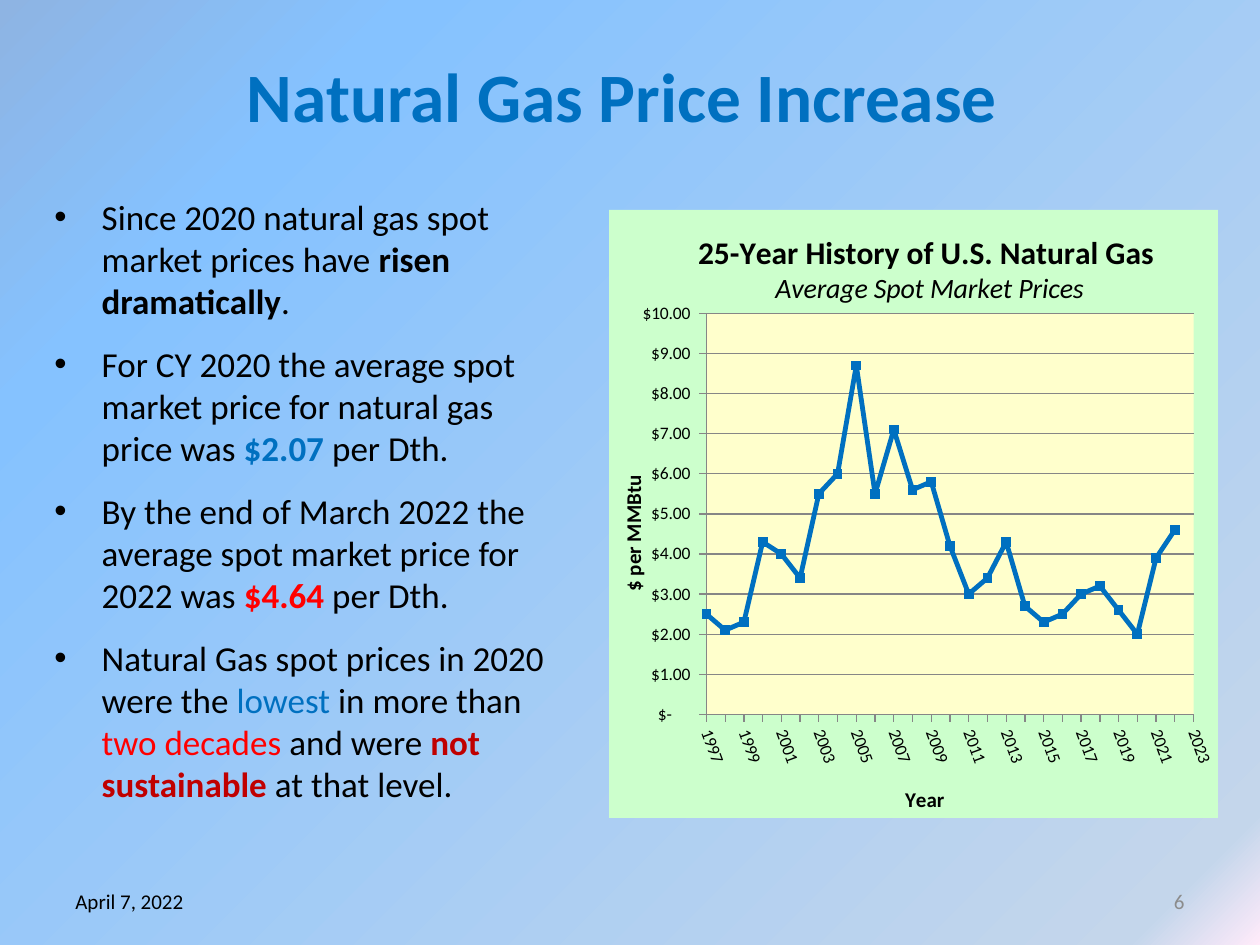
from lxml import etree
from pptx import Presentation
from pptx import util as u
from pptx.chart import data as chart_data
from pptx.dml.color import RGBColor
from pptx.enum import chart as charts, text
from pptx.oxml import parse_xml
from pptx.oxml.ns import nsdecls, qn

Pt = u.Pt
FONT = "Calibri"
BLACK = RGBColor(0, 0, 0)
BLUE = RGBColor(0x00, 0x70, 0xC0)
RED = RGBColor(0xFF, 0, 0)
DARK_RED = RGBColor(0xC0, 0, 0)
GRAY = RGBColor(0x8C, 0x8C, 0x8C)
GRID = RGBColor(0x86, 0x86, 0x86)
GREEN = RGBColor(0xCC, 0xFF, 0xCC)
CREAM = RGBColor(0xFF, 0xFF, 0xCC)
BACKDROP = [(0, "8EB4E3"), (19, "85C2FF"), (94, "C4D6EB"), (100, "FFEBFA")]

# Content: each span is (words, format values)
TITLE = [("Natural Gas Price Increase ", {"size": Pt(39.6), "color": BLUE, "bold": True})]
BULLETS = [
    [("Since 2020 natural gas spot market prices have ", {}),
     ("risen dramatically", {"bold": True}), (".", {})],
    [("For CY 2020 the average spot market price for natural gas price was ", {}),
     ("$2.07 ", {"color": BLUE, "bold": True}), ("per Dth.", {})],
    [("By the end of March 2022 the average spot market price for 2022 was ", {}),
     ("$4.64 ", {"color": RED, "bold": True}), ("per Dth.", {})],
    [("Natural Gas spot prices in 2020 were the ", {}), ("lowest", {"color": BLUE}),
     (" in more than ", {}), ("two decades ", {"color": RED}), ("and were ", {}),
     ("not sustainable", {"color": DARK_RED, "bold": True}), (" at that level.", {})],
]
DATE = [("April 7, 2022", {"size": Pt(12)})]
PAGE_NUMBER = [("6", {"size": Pt(12), "color": GRAY})]
CHART_TITLE = [
    [("25-Year History of U.S. Natural Gas ", {"size": Pt(18), "bold": True})],
    [("Average Spot Market Prices", {"size": Pt(16), "bold": False, "italic": True})],
]
AXIS_TITLE = {"size": Pt(12), "bold": True}
YEARS = [str(year) for year in range(1997, 2024)]
PRICES = [2.5, 2.1, 2.3, 4.3, 4, 3.4, 5.5, 6, 8.7, 5.5, 7.1, 5.6, 5.8, 4.2, 3, 3.4, 4.3,
          2.7, 2.3, 2.5, 3, 3.2, 2.6, 2, 3.9, 4.6, None]
PRICE_FORMAT = r'_("$"* #,##0.00_);_("$"* \(#,##0.00\);_("$"* "-"??_);_(@_)'


def style(font, values):
    for name, value in {"name": FONT, "size": Pt(20), "color": BLACK, **values}.items():
        if name == "color":
            font.color.rgb = value
        else:
            setattr(font, name, value)


def write(frame, paragraphs, align=None):
    for i, spans in enumerate(paragraphs):
        para = frame.paragraphs[0] if i == 0 else frame.add_paragraph()
        para.alignment = align
        for words, values in spans:
            span = para.add_run()
            span.text = words
            style(span.font, values)


def add_text(page, place, paragraphs, align=None, anchor=text.MSO_ANCHOR.MIDDLE):
    frame = page.shapes.add_textbox(*map(Pt, place)).text_frame
    frame.word_wrap = True
    frame.vertical_anchor = anchor
    write(frame, paragraphs, align)
    return frame


def place_part(part, inner=False, **place):
    """Fix the position of a chart title or plot area, in fractions of the chart."""
    target = '<c:layoutTarget val="inner"/>' if inner else ""
    modes = "".join(f'<c:{key}Mode val="edge"/>' for key in "xy")
    sizes = "".join(f'<c:{key} val="{value}"/>' for key, value in place.items())
    layout = parse_xml(f'<c:layout {nsdecls("c")}><c:manualLayout>{target}{modes}{sizes}'
                       '</c:manualLayout></c:layout>')
    for old in part.findall(qn("c:layout")):
        part.remove(old)
    words = part.find(qn("c:tx"))
    part.insert(0 if words is None else 1, layout)


deck = Presentation()
deck.slide_width, deck.slide_height = Pt(720), Pt(540)
page = deck.slides.add_slide(deck.slide_layouts[6])

# Background gradient
fill = page.background.fill
fill.gradient()
fill.gradient_angle = 315
stops = page.background._cSld.find(".//" + qn("a:gsLst"))
for stop in list(stops):
    stops.remove(stop)
for position, color in BACKDROP:
    stop = etree.SubElement(stops, qn("a:gs"), pos=str(position * 1000))
    etree.SubElement(stop, qn("a:srgbClr"), val=color)

# Title, bullets and footer
add_text(page, (36, 30, 648, 48), [TITLE], text.PP_ALIGN.CENTER)
body = add_text(page, (24, 108, 300, 378), BULLETS, anchor=text.MSO_ANCHOR.TOP)
for para in body.paragraphs:
    props = para._p.get_or_add_pPr()
    props.set("marL", str(Pt(27)))
    props.set("indent", str(-Pt(27)))
    etree.SubElement(props, qn("a:buFont"), typeface="Arial")
    etree.SubElement(props, qn("a:buChar"), char="•")
    para.space_after = Pt(12)
add_text(page, (516, 500.5, 168, 29), [PAGE_NUMBER], text.PP_ALIGN.RIGHT)
add_text(page, (36, 500.5, 168, 29), [DATE])

# Price chart
data = chart_data.CategoryChartData()
data.categories = YEARS
data.add_series("Series 1", PRICES)
chart = page.shapes.add_chart(charts.XL_CHART_TYPE.LINE_MARKERS,
                              *map(Pt, (348, 120, 348, 348)), data).chart
style(chart.font, {"size": Pt(10)})
chart.has_legend = False
write(chart.chart_title.text_frame, CHART_TITLE, text.PP_ALIGN.CENTER)
place_part(chart.chart_title._element, x=0.14, y=0.03)

# Chart and plot backgrounds
plot_area = chart._chartSpace.chart.plotArea
place_part(plot_area, inner=True, x=0.16, y=0.17, w=0.8, h=0.66)
for parent, color in ((chart._chartSpace, GREEN), (plot_area, CREAM)):
    look = parse_xml(f'<c:spPr {nsdecls("c", "a")}><a:solidFill><a:srgbClr val="{color}"/>'
                     '</a:solidFill><a:ln><a:noFill/></a:ln></c:spPr>')
    if parent is plot_area:
        parent.append(look)
    else:
        parent.chart.addnext(look)

# Axes
years, prices = chart.category_axis, chart.value_axis
for axis, words, x, y in ((years, "Year", 0.48, 0.94), (prices, "$ per MMBtu", 0.01, 0.43)):
    write(axis.axis_title.text_frame, [[(words, AXIS_TITLE)]])
    place_part(axis.axis_title._element, x=x, y=y)
    axis.major_tick_mark = charts.XL_TICK_MARK.OUTSIDE
    axis.format.line.color.rgb = GRID
    style(axis.tick_labels.font, {"size": Pt(10)})
prices.minimum_scale, prices.maximum_scale, prices.major_unit = 0, 10, 1
prices.has_major_gridlines = True
prices.major_gridlines.format.line.color.rgb = GRID
prices.tick_labels.number_format = PRICE_FORMAT
prices.tick_labels.number_format_is_linked = False
years._element.find(qn("c:txPr")).find(qn("a:bodyPr")).set("rot", str(70 * 60000))

# Points on the tick marks, every second year labelled
for axis, setting, value, follower in ((prices, "crossBetween", "midCat", "majorUnit"),
                                       (years, "tickLblSkip", "2", "noMultiLvlLbl")):
    element = parse_xml(f'<c:{setting} {nsdecls("c")} val="{value}"/>')
    axis._element.find(qn(f"c:{follower}")).addprevious(element)

# Price line
chart.plots[0].vary_by_categories = False
line = chart.plots[0].series[0]
line.smooth = False
line.format.line.color.rgb = BLUE
line.format.line.width = Pt(2.75)
line.marker.style = charts.XL_MARKER_STYLE.SQUARE
line.marker.size = 5
line.marker.format.fill.solid()
line.marker.format.fill.fore_color.rgb = BLUE
line.marker.format.line.color.rgb = BLUE

deck.save("out.pptx")
